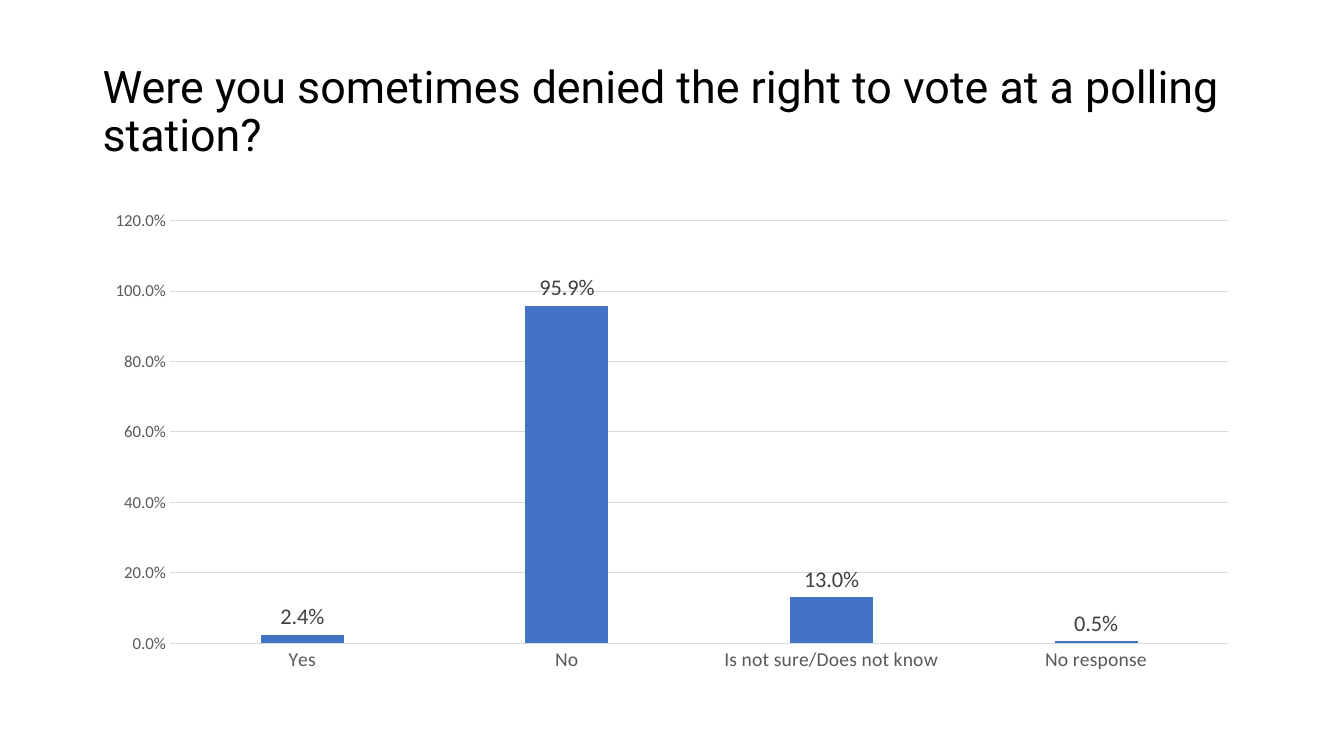
from dataclasses import dataclass

from pptx import Presentation
from pptx.chart.data import CategoryChartData
from pptx.dml.color import RGBColor
from pptx.enum.chart import XL_CHART_TYPE, XL_LABEL_POSITION, XL_TICK_MARK
from pptx.enum.text import MSO_ANCHOR, MSO_AUTO_SIZE, PP_ALIGN
from pptx.util import Cm, Pt


@dataclass(frozen=True)
class Theme:
    """Colours, fonts and type sizes of the slide."""
    question: str = "000000"
    axis: str = "595959"
    label: str = "404040"
    rule: str = "D9D9D9"
    bar: str = "4472C4"
    heading_face: str = "Roboto"
    chart_face: str = "Calibri"
    question_size: int = 32
    label_size: int = 16
    answer_size: int = 14
    scale_size: int = 12
    chart_size: int = 10


THEME = Theme()
PERCENT = "0.0%"
LEFT, WIDTH = Cm(2.33), Cm(29.21)
SHARES = {
    "Yes": 0.024,
    "No": 0.959,
    "Is not sure/Does not know": 0.13,
    "No response": 0.005,
}


def style_font(font, face, size, color):
    """Apply a typeface, point size and colour to a font."""
    font.name = face
    font.size = Pt(size)
    font.bold = False
    font.color.rgb = RGBColor.from_string(color)


def write_text(frame, text, *, face, size, color, spacing=1.0,
               anchor=MSO_ANCHOR.TOP, align=PP_ALIGN.LEFT):
    """Put one formatted paragraph in a text frame."""
    frame.word_wrap = True
    frame.auto_size = MSO_AUTO_SIZE.NONE
    frame.vertical_anchor = anchor
    paragraph = frame.paragraphs[0]
    paragraph.alignment = align
    paragraph.line_spacing = spacing
    run = paragraph.add_run()
    run.text = text
    style_font(run.font, face, size, color)


def add_question(slide, text):
    """Place the survey question in the title placeholder."""
    question = slide.shapes.title
    question.left, question.top = LEFT, Cm(1.01)
    question.width, question.height = WIDTH, Cm(3.68)
    write_text(question.text_frame, text, face=THEME.heading_face,
               size=THEME.question_size, color=THEME.question,
               spacing=0.9, anchor=MSO_ANCHOR.MIDDLE)


def style_rule(line):
    """Draw a thin grey chart line."""
    line.color.rgb = RGBColor.from_string(THEME.rule)
    line.width = Pt(0.75)


def style_axis(axis, size):
    """Remove tick marks and format the axis text."""
    axis.major_tick_mark = XL_TICK_MARK.NONE
    axis.minor_tick_mark = XL_TICK_MARK.NONE
    style_font(axis.tick_labels.font, THEME.chart_face, size, THEME.axis)


def style_bars(plot):
    """Set the bar spacing, fill and value labels."""
    plot.gap_width = 219
    plot.overlap = -27
    plot.vary_by_categories = False
    responses = plot.series[0]
    responses.invert_if_negative = False
    responses.format.fill.solid()
    responses.format.fill.fore_color.rgb = RGBColor.from_string(THEME.bar)
    labels = responses.data_labels
    labels.show_value = True
    labels.number_format = PERCENT
    labels.number_format_is_linked = False
    labels.position = XL_LABEL_POSITION.OUTSIDE_END
    style_font(labels.font, THEME.chart_face, THEME.label_size, THEME.label)


def add_shares_chart(slide, shares):
    """Chart the share of each answer as columns."""
    survey = CategoryChartData(number_format=PERCENT)
    survey.categories = list(shares)
    survey.add_series("Series 1", list(shares.values()))
    chart = slide.shapes.add_chart(XL_CHART_TYPE.COLUMN_CLUSTERED, LEFT,
                                   Cm(5.07), WIDTH, Cm(12.09), survey).chart
    chart.has_legend = False
    chart.has_title = False
    style_font(chart.font, THEME.chart_face, THEME.chart_size, THEME.question)
    style_bars(chart.plots[0])

    answers, scale = chart.category_axis, chart.value_axis
    style_axis(answers, THEME.answer_size)
    style_rule(answers.format.line)
    style_axis(scale, THEME.scale_size)
    scale.format.line.fill.background()
    scale.minimum_scale, scale.maximum_scale, scale.major_unit = 0, 1.2, 0.2
    scale.tick_labels.number_format = PERCENT
    scale.tick_labels.number_format_is_linked = False
    scale.has_major_gridlines = True
    style_rule(scale.major_gridlines.format.line)


def main():
    """Build and save the survey slide."""
    deck = Presentation()
    deck.slide_width, deck.slide_height = Cm(33.87), Cm(19.05)
    slide = deck.slides.add_slide(deck.slide_layouts.get_by_name("Title Only"))
    add_question(slide, "Were you sometimes denied the right to vote "
                        "at a polling station?")
    add_shares_chart(slide, SHARES)
    deck.save("out.pptx")


if __name__ == "__main__":
    main()
